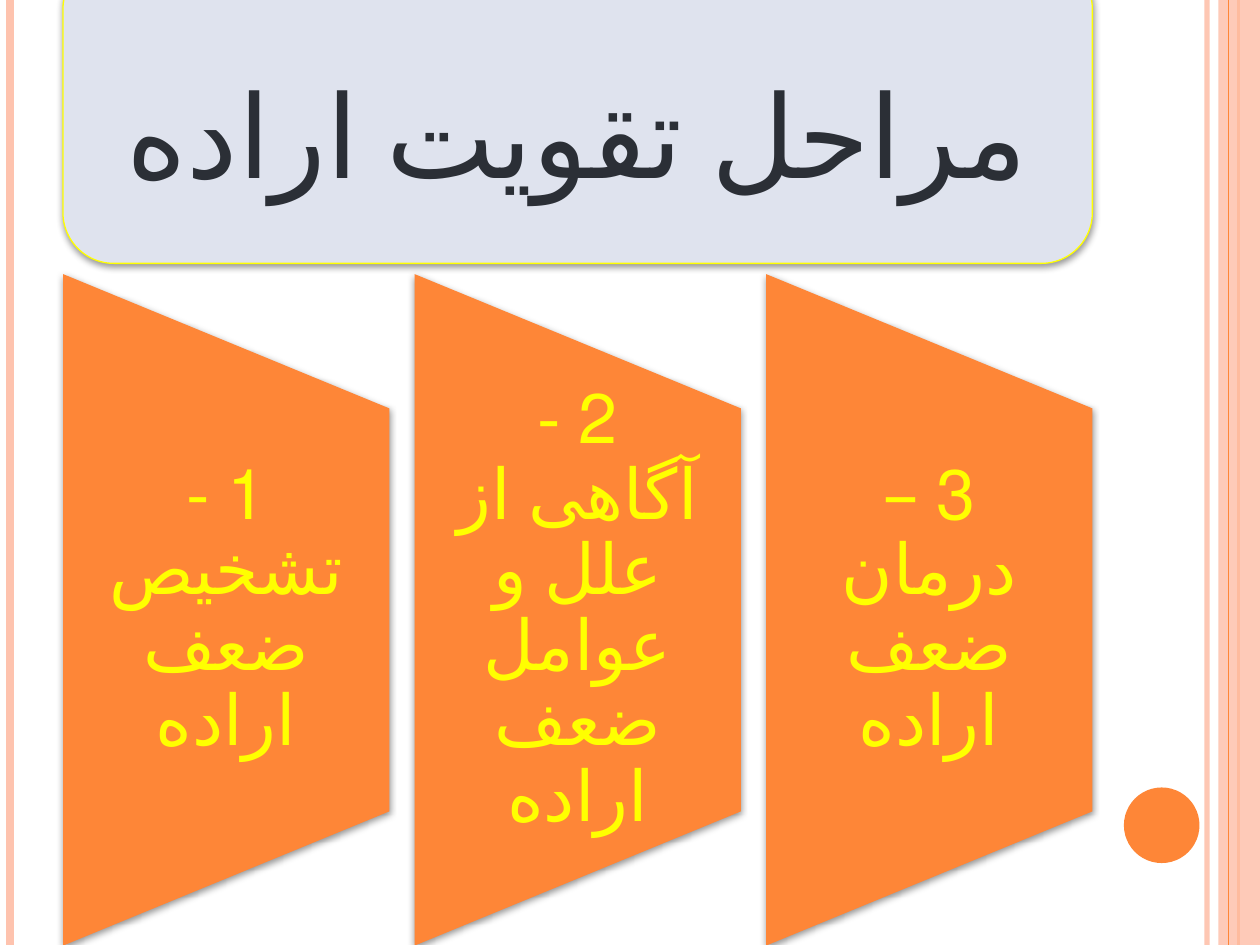
from lxml.etree import SubElement
from pptx import Presentation
from pptx.dml.color import RGBColor
from pptx.enum.lang import MSO_LANGUAGE_ID as Language
from pptx.enum.shapes import MSO_CONNECTOR as Connector, MSO_SHAPE as Shape
from pptx.enum.text import MSO_ANCHOR as Anchor, PP_ALIGN as Align
from pptx.oxml.ns import qn
from pptx.util import Inches, Pt

COLORS = {
    "accent": "FE8637",
    "blush": "FEC3AE",
    "panel": "DFE3EE",
    "ink": "2B2F36",
    "yellow": "FFFF00",
    "shadow": "000000",
}
WIDTH, HEIGHT = 10, 7.5
COLUMNS, ROWS = 100, 75
STEPS = [("1 -", "تشخیص ضعف اراده"), ("2 -", "آگاهی از علل و عوامل ضعف اراده"), ("3 –", "درمان ضعف اراده")]


def color(name):
    return RGBColor.from_string(COLORS[name])


def write(frame, lines, font, size, ink, insets):
    frame.word_wrap = True
    frame.vertical_anchor = Anchor.MIDDLE
    frame.margin_left, frame.margin_top, frame.margin_right, frame.margin_bottom = map(Inches, insets)
    paragraph = frame.paragraphs[0]
    paragraph.alignment = Align.CENTER
    paragraph.line_spacing = 0.9
    paragraph._p.get_or_add_pPr().set("rtl", "1")
    for index, line in enumerate(lines):
        if index:
            paragraph.add_line_break()
        run = paragraph.add_run()
        run.text = line
        run.font.name = font
        run.font.size = Pt(size)
        run.font.language_id = Language.FARSI
        run.font.color.rgb = color(ink)


def set_alpha(fill_parent, percent):
    tag = fill_parent.find(".//" + qn("a:srgbClr"))
    SubElement(tag, qn("a:alpha"), val=str(percent * 1000))


class Board:
    def __init__(self, slide):
        self.slide = slide

    def place(self, left, top, width, height):
        column, row = WIDTH / COLUMNS, HEIGHT / ROWS
        return [Inches(left * column), Inches(top * row), Inches(width * column), Inches(height * row)]

    def shape(self, kind, box, fill, line=None, alpha=None, shadow=False, rotation=0):
        shape = self.slide.shapes.add_shape(kind, *self.place(*box))
        shape.rotation = rotation
        shape.fill.solid()
        shape.fill.fore_color.rgb = color(fill)
        if alpha:
            set_alpha(shape._element.spPr, alpha)
        if line:
            shape.line.color.rgb = color(line)
            shape.line.width = Pt(0.75)
        else:
            shape.line.fill.background()
        shape.shadow.inherit = False
        if shadow:
            self.drop_shadow(shape)
        return shape

    def drop_shadow(self, shape):
        effects = shape._element.spPr.find(qn("a:effectLst"))
        outer = SubElement(effects, qn("a:outerShdw"), blurRad=str(Pt(4)), dist=str(Pt(1.6)),
                           dir="5400000", rotWithShape="0")
        SubElement(outer, qn("a:srgbClr"), val=COLORS["shadow"])
        set_alpha(outer, 42)

    def stripe(self, column, ink, width, alpha=None):
        left, top, _, height = self.place(column, 0, 0, ROWS)
        line = self.slide.shapes.add_connector(Connector.STRAIGHT, left, top, left, height)
        line.line.color.rgb = color(ink)
        line.line.width = Pt(width)
        if alpha:
            set_alpha(line._element.spPr, alpha)
        SubElement(line._element.spPr, qn("a:effectLst"))

    def text(self, box, lines, **style):
        frame = self.slide.shapes.add_textbox(*self.place(*box)).text_frame
        write(frame, lines, **style)


def main():
    presentation = Presentation()
    presentation.slide_width, presentation.slide_height = Inches(WIDTH), Inches(HEIGHT)
    board = Board(presentation.slides.add_slide(presentation.slide_layouts[6]))

    board.stripe(95.8, "blush", 3, alpha=93)
    board.stripe(0.8, "blush", 4.5)
    board.stripe(98.3, "accent", 1.5)
    board.shape(Shape.RECTANGLE, (96.7, 0, 3.3, ROWS), "blush", alpha=87)
    board.stripe(97.5, "accent", 0.75)
    board.shape(Shape.OVAL, (89.2, 62.5, 6, 6), "accent")

    left, total, gap = 5, 81.7, 2
    board.shape(Shape.ROUNDED_RECTANGLE, (left, -3.3, total, 24.2), "panel", line="yellow", shadow=True)
    board.text((left + 1.2, -2.2, total - 2.4, 21.8), ["مراحل تقویت اراده"],
               font="Roboto", size=66, ink="ink", insets=(0.28, 0.78, 0.28, 0.28))

    width = (total - gap * (len(STEPS) - 1)) / len(STEPS)
    length, middle, text_height = 53.3, 48.4, 32
    for index, step in enumerate(STEPS):
        start = left + index * (width + gap)
        board.shape(Shape.FLOWCHART_MANUAL_OPERATION,
                    (start + (width - length) / 2, middle - width / 2, length, width),
                    "accent", shadow=True, rotation=270)
        board.text((start, middle - text_height / 2, width, text_height), step,
                   font="Cambria", size=40, ink="yellow", insets=(0.28, 0, 0.28, 0))

    presentation.save("out.pptx")


if __name__ == "__main__":
    main()
